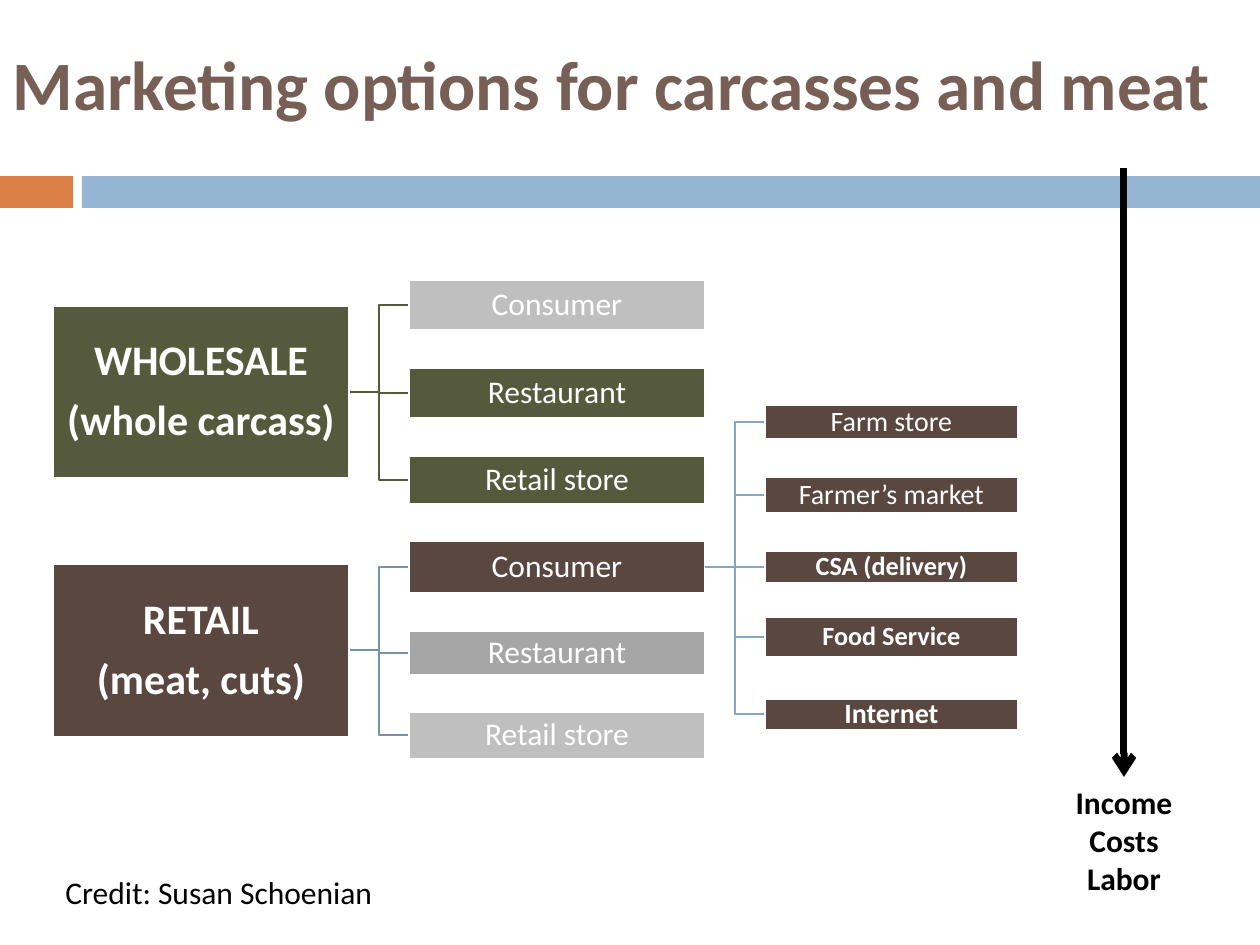
import pptx
import pptx.util
import pptx.dml.color
import pptx.enum.shapes
import pptx.enum.text
import pptx.oxml.ns

PX = 914400 / 126
FONT = "Calibri"
COLORS = {
    "white": "FFFFFF", "black": "000000", "title": "775F55",
    "orange": "DD8047", "blue": "94B6D2", "green": "565A3C", "brown": "594740",
    "silver": "BFBFBF", "gray": "A6A6A6",
    "retail link": "7792A8", "consumer link": "86A5BF",
}
ALIGN = pptx.enum.text.PP_ALIGN
MIDDLE = pptx.enum.text.MSO_ANCHOR.MIDDLE


def px(length):
    return pptx.util.Emu(round(length * PX))


def rgb(color):
    return pptx.dml.color.RGBColor.from_string(COLORS[color])


class SlideBuilder:
    """Draws styled elements on the current slide, with lengths in px."""

    def __init__(self, slide):
        self.slide = slide
        self.shapes = slide.shapes

    def set_text(self, frame, text, size, color, bold, align, inset=None):
        frame.word_wrap = True
        frame.auto_size = pptx.enum.text.MSO_AUTO_SIZE.NONE
        frame.text = text
        if inset is not None:
            frame.margin_left = frame.margin_right = px(inset)
            frame.margin_top = frame.margin_bottom = px(inset)
        for paragraph in frame.paragraphs:
            paragraph.alignment = align
            for run in paragraph.runs:
                run.font.name = FONT
                run.font.size = pptx.util.Pt(size)
                run.font.bold = bold
                run.font.color.rgb = rgb(color)

    def title(self, text, left, top, width, height, size):
        heading = self.shapes.title
        heading.left, heading.top = px(left), px(top)
        heading.width, heading.height = px(width), px(height)
        self.set_text(heading.text_frame, text, size, "title", True, ALIGN.LEFT)
        heading.text_frame.vertical_anchor = MIDDLE

    def rect(self, left, top, width, height, fill):
        block = self.shapes.add_shape(
            pptx.enum.shapes.MSO_SHAPE.RECTANGLE,
            px(left), px(top), px(width), px(height))
        block.shadow.inherit = False
        block.fill.solid()
        block.fill.fore_color.rgb = rgb(fill)
        block.line.fill.background()
        return block

    def option(self, box, text, fill, size, bold=False):
        block = self.rect(*box, fill)
        block.line.color.rgb = rgb("white")
        block.line.width = pptx.util.Pt(1.5)
        frame = block.text_frame
        self.set_text(frame, text, size, "white", bold, ALIGN.CENTER, inset=2)
        frame.vertical_anchor = MIDDLE
        for paragraph in frame.paragraphs:
            paragraph.line_spacing = 0.9
            paragraph.space_after = pptx.util.Pt(round(size * 0.35, 1))

    def link(self, parent, child, color):
        start_x, start_y = parent[0] + parent[2], parent[1] + parent[3] // 2
        end_x, end_y = child[0], child[1] + child[3] // 2
        bend_x = (start_x + end_x) // 2
        elbow = self.shapes.build_freeform(start_x, start_y, scale=PX)
        elbow.add_line_segments(
            [(bend_x, start_y), (bend_x, end_y), (end_x, end_y)], close=False)
        branch = elbow.convert_to_shape()
        branch.shadow.inherit = False
        branch.fill.background()
        branch.line.color.rgb = rgb(color)
        branch.line.width = pptx.util.Pt(1.5)

    def arrow(self, x, top, bottom, color, width):
        trend = self.shapes.add_connector(
            pptx.enum.shapes.MSO_CONNECTOR.STRAIGHT, px(x), px(top), px(x), px(bottom))
        trend.line.color.rgb = rgb(color)
        trend.line.width = pptx.util.Pt(width)
        qn = pptx.oxml.ns.qn
        properties = trend._element.spPr
        outline = properties.find(qn("a:ln"))
        outline.append(outline.makeelement(qn("a:tailEnd"), {"type": "arrow"}))
        properties.append(properties.makeelement(qn("a:effectLst"), {}))

    def label(self, left, top, width, height, text, align, bold=False):
        box = self.shapes.add_textbox(px(left), px(top), px(width), px(height))
        self.set_text(box.text_frame, text, 18, "black", bold, align)


def main():
    deck = pptx.Presentation()
    deck.slide_width, deck.slide_height = px(1260), px(945)
    builder = SlideBuilder(deck.slides.add_slide(deck.slide_layouts[5]))

    builder.rect(0, 176, 73, 32, "orange")
    builder.rect(82, 176, 1178, 32, "blue")
    builder.title("Marketing options for carcasses and meat", 0, 4, 1239, 157, 39.6)

    channels = [
        ("WHOLESALE\n(whole carcass)", 306, 172, "green", "green", [
            ("Consumer", 280, 50, "silver"),
            ("Restaurant", 368, 50, "green"),
            ("Retail store", 456, 48, "green")]),
        ("RETAIL\n(meat, cuts)", 564, 173, "brown", "retail link", [
            ("Consumer", 541, 52, "brown"),
            ("Restaurant", 631, 44, "gray"),
            ("Retail store", 712, 47, "silver")]),
    ]
    outlets = [
        ("Farm store", 405, 34, 16, False),
        ("Farmer’s market", 477, 36, 16, False),
        ("CSA (delivery)", 551, 32, 15, True),
        ("Food Service", 617, 40, 15, True),
        ("Internet", 699, 31, 16, True),
    ]

    for channel, top, height, fill, link_color, buyers in channels:
        channel_box = (53, top, 296, height)
        for buyer, buyer_top, buyer_height, buyer_fill in buyers:
            buyer_box = (409, buyer_top, 296, buyer_height)
            builder.link(channel_box, buyer_box, link_color)
            builder.option(buyer_box, buyer, buyer_fill, 18)
        builder.option(channel_box, channel, fill, 24, bold=True)

    retail_consumer = (409, 541, 296, 52)
    for outlet, top, height, size, bold in outlets:
        outlet_box = (765, top, 253, height)
        builder.link(retail_consumer, outlet_box, "consumer link")
        builder.option(outlet_box, outlet, "brown", size, bold)

    builder.arrow(1124, 168, 777, "black", 4)
    builder.label(1056, 777, 136, 127, "Income\nCosts\nLabor", ALIGN.CENTER, bold=True)
    builder.label(53, 867, 343, 50, "Credit: Susan Schoenian", ALIGN.LEFT)

    deck.save("out.pptx")


if __name__ == "__main__":
    main()
